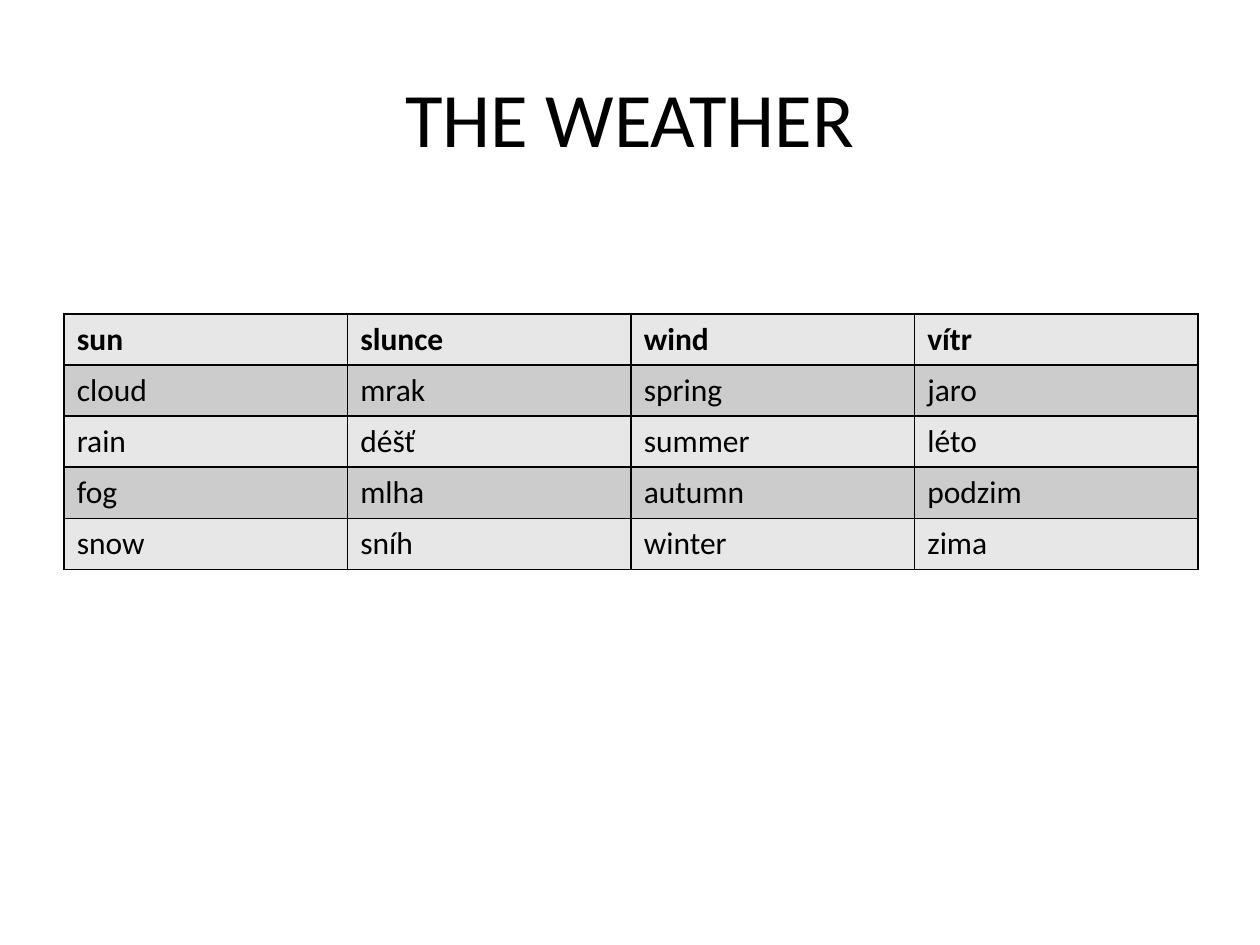
"""Build a vocabulary slide about the weather."""
from dataclasses import dataclass

from lxml import etree
from pptx import Presentation
from pptx import util as u
from pptx.dml import color
from pptx.enum import text
from pptx.oxml import ns


@dataclass(frozen=True)
class Theme:
    """Colours, font and sizes of the slide."""
    font: str = "Calibri"
    ink: str = "000000"
    bands: tuple = ("E7E7E7", "CCCCCC")
    title_size: int = 44
    cell_size: int = 18
    border_width: int = 1


THEME = Theme()
TITLE = "THE WEATHER"
VOCABULARY = [
    ("sun", "slunce", "wind", "vítr"),
    ("cloud", "mrak", "spring", "jaro"),
    ("rain", "déšť", "summer", "léto"),
    ("fog", "mlha", "autumn", "podzim"),
    ("snow", "sníh", "winter", "zima"),
]


def format_text(text_frame, size, bold=False):
    """Apply the theme font to every run."""
    for paragraph in text_frame.paragraphs:
        for run in paragraph.runs:
            run.font.name = THEME.font
            run.font.size = u.Pt(size)
            run.font.bold = bold
            run.font.color.rgb = color.RGBColor.from_string(THEME.ink)


def add_borders(cell):
    """Draw a solid line on all four sides of a cell."""
    properties = cell._tc.get_or_add_tcPr()
    for side in ("lnL", "lnR", "lnT", "lnB"):
        line = etree.SubElement(properties, ns.qn(f"a:{side}"),
                                w=str(u.Pt(THEME.border_width)))
        fill = etree.SubElement(line, ns.qn("a:solidFill"))
        etree.SubElement(fill, ns.qn("a:srgbClr"), val=THEME.ink)


def add_title(slide, left, top, width, height):
    """Place the centred title in its box."""
    text_frame = slide.shapes.add_textbox(left, top, width, height).text_frame
    text_frame.word_wrap = True
    text_frame.vertical_anchor = text.MSO_ANCHOR.MIDDLE
    text_frame.text = TITLE
    text_frame.paragraphs[0].alignment = text.PP_ALIGN.CENTER
    format_text(text_frame, THEME.title_size)


def add_vocabulary(slide, left, top, width, height):
    """Place the banded word table in its box."""
    table = slide.shapes.add_table(len(VOCABULARY), len(VOCABULARY[0]),
                                   left, top, width, height).table
    for row, words in enumerate(VOCABULARY):
        for column, word in enumerate(words):
            cell = table.cell(row, column)
            cell.text_frame.text = word
            format_text(cell.text_frame, THEME.cell_size, bold=row == 0)
            add_borders(cell)
            cell.fill.solid()
            band = THEME.bands[row % len(THEME.bands)]
            cell.fill.fore_color.rgb = color.RGBColor.from_string(band)


def main():
    """Create the presentation and save it."""
    presentation = Presentation()
    presentation.slide_width = u.Inches(10)
    presentation.slide_height = u.Inches(7.5)
    slide = presentation.slides.add_slide(presentation.slide_layouts[6])
    add_title(slide, u.Inches(0.5), u.Inches(0.3), u.Inches(9), u.Inches(1.25))
    add_vocabulary(slide, u.Inches(0.51), u.Inches(2.49), u.Inches(9), u.Inches(2.03))
    presentation.save("out.pptx")


if __name__ == "__main__":
    main()
